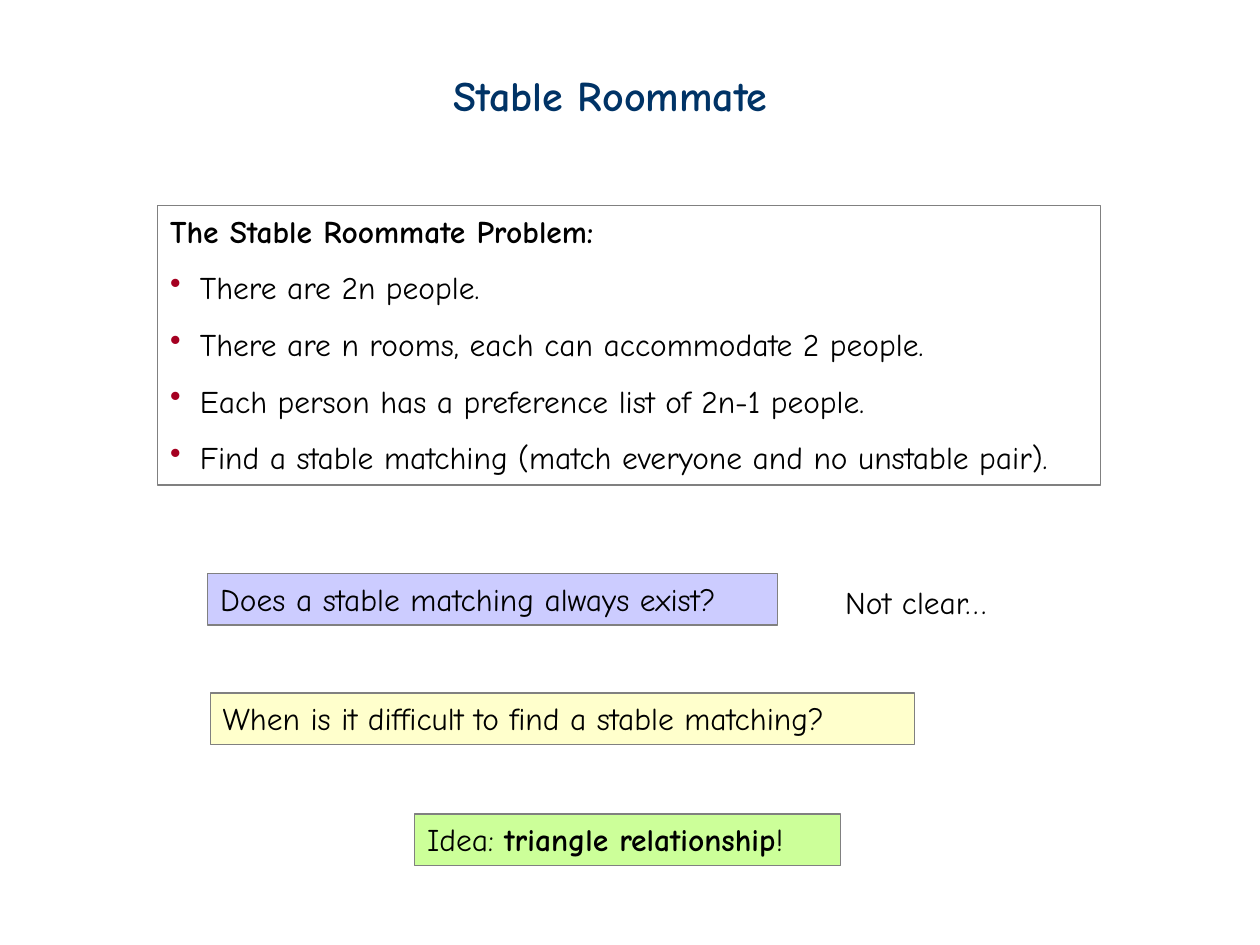
from lxml import etree
from pptx import Presentation
from pptx.dml.color import RGBColor
from pptx.enum.shapes import MSO_SHAPE
from pptx.enum.text import MSO_ANCHOR, PP_ALIGN
from pptx.oxml.ns import qn
from pptx.util import Cm, Pt

RECTANGLE = MSO_SHAPE.RECTANGLE
TOP = MSO_ANCHOR.TOP
LEFT = PP_ALIGN.LEFT

NAVY = RGBColor(0x00, 0x33, 0x66)
BLACK = RGBColor(0x00, 0x00, 0x00)
GRAY = RGBColor(0x80, 0x80, 0x80)
CRIMSON = RGBColor(0xA5, 0x00, 0x21)
LAVENDER = RGBColor(0xCC, 0xCC, 0xFF)
CREAM = RGBColor(0xFF, 0xFF, 0xCC)
LIME = RGBColor(0xCC, 0xFF, 0x99)

PROBLEM_FACTS = [
    "There are 2n people.",
    "There are n rooms, each can accommodate 2 people.",
    "Each person has a preference list of 2n-1 people.",
    "Find a stable matching (match everyone and no unstable pair).",
]


class SlideBuilder:
    font_name = "Comic Neue"
    body_size = 18
    bar_height = 1.04
    bullet_indent = Cm(0.6)

    def __init__(self, page):
        self.page = page

    def add_spans(self, para, spans, size=body_size, color=BLACK):
        para.alignment = LEFT
        for text, bold in spans:
            span = para.add_run()
            span.text = text
            span.font.name = self.font_name
            span.font.size = Pt(size)
            span.font.bold = bold
            span.font.color.rgb = color

    def label(self, left, top, width, height, spans, **style):
        box = self.page.shapes.add_textbox(Cm(left), Cm(top), Cm(width), Cm(height))
        box.text_frame.word_wrap = True
        self.add_spans(box.text_frame.paragraphs[0], spans, **style)

    def panel(self, left, top, width, spans, fill=None, height=bar_height):
        box = self.page.shapes.add_shape(
            RECTANGLE, Cm(left), Cm(top), Cm(width), Cm(height)
        )
        box.shadow.inherit = False
        if fill is None:
            box.fill.background()
        else:
            box.fill.solid()
            box.fill.fore_color.rgb = fill
        box.line.color.rgb = GRAY
        box.line.width = Pt(0.75)
        box.text_frame.word_wrap = True
        box.text_frame.vertical_anchor = TOP
        self.add_spans(box.text_frame.paragraphs[0], spans)
        return box

    def bullet(self, box, text):
        para = box.text_frame.add_paragraph()
        para.line_spacing = 1.5
        self.add_spans(para, [(text, False)])
        properties = para._p.get_or_add_pPr()
        properties.set("marL", str(self.bullet_indent))
        properties.set("indent", str(-self.bullet_indent))
        color = etree.SubElement(properties, qn("a:buClr"))
        etree.SubElement(color, qn("a:srgbClr"), val=str(CRIMSON))
        etree.SubElement(properties, qn("a:buChar"), char="•")


def main():
    deck = Presentation()
    deck.slide_width = Cm(25.4)
    deck.slide_height = Cm(19.05)
    builder = SlideBuilder(deck.slides.add_slide(deck.slide_layouts[6]))

    builder.label(
        8.89, 1.27, 7.62, 1.27, [("Stable Roommate", True)], size=24, color=NAVY
    )
    problem = builder.panel(
        3.18, 4.14, 19, [("The Stable Roommate Problem:", True)], height=5.64
    )
    for fact in PROBLEM_FACTS:
        builder.bullet(problem, fact)

    builder.panel(
        4.19, 11.56, 11.48, [("Does a stable matching always exist?", False)], LAVENDER
    )
    builder.label(16.79, 11.63, 3.76, 1.02, [("Not clear…", False)])
    builder.panel(
        4.24,
        13.97,
        14.2,
        [("When is it difficult to find a stable matching?", False)],
        CREAM,
    )
    idea = [("Idea: ", False), ("triangle relationship", True), ("!", False)]
    builder.panel(8.36, 16.41, 8.59, idea, LIME)

    deck.save("out.pptx")


if __name__ == "__main__":
    main()
